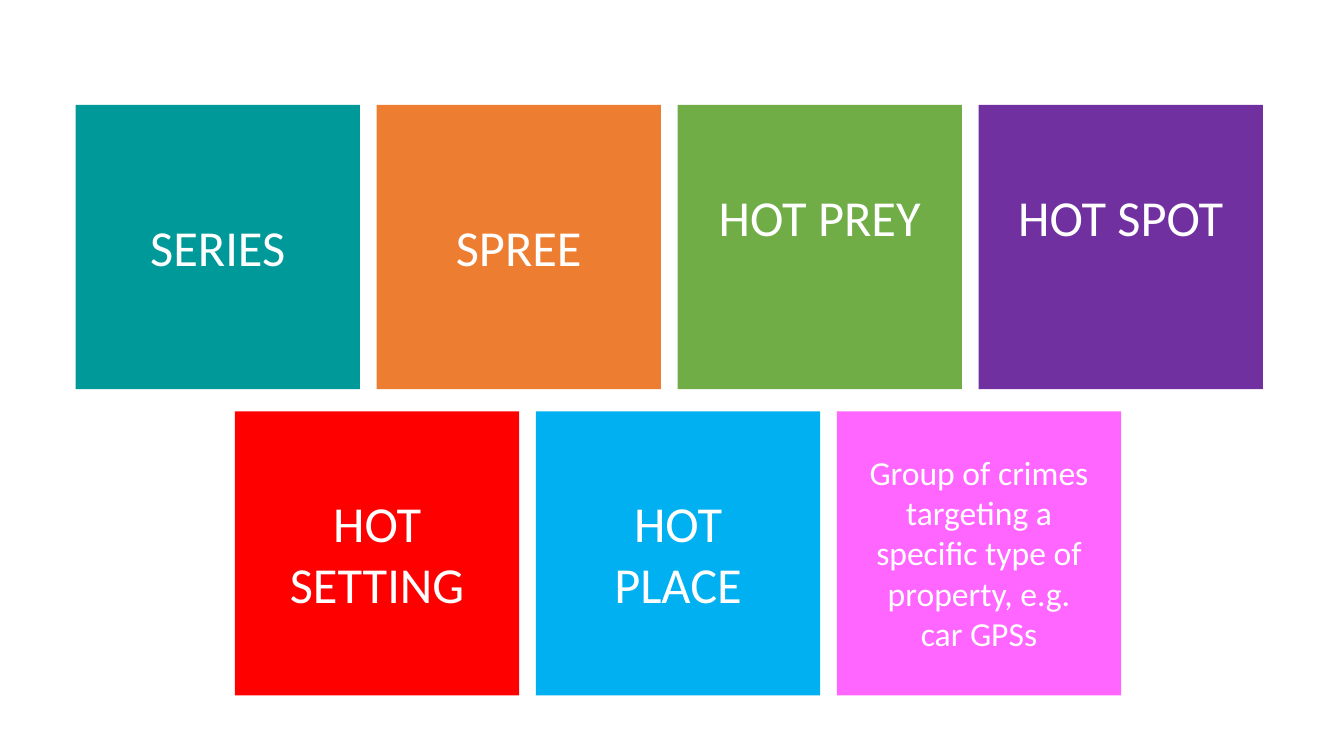
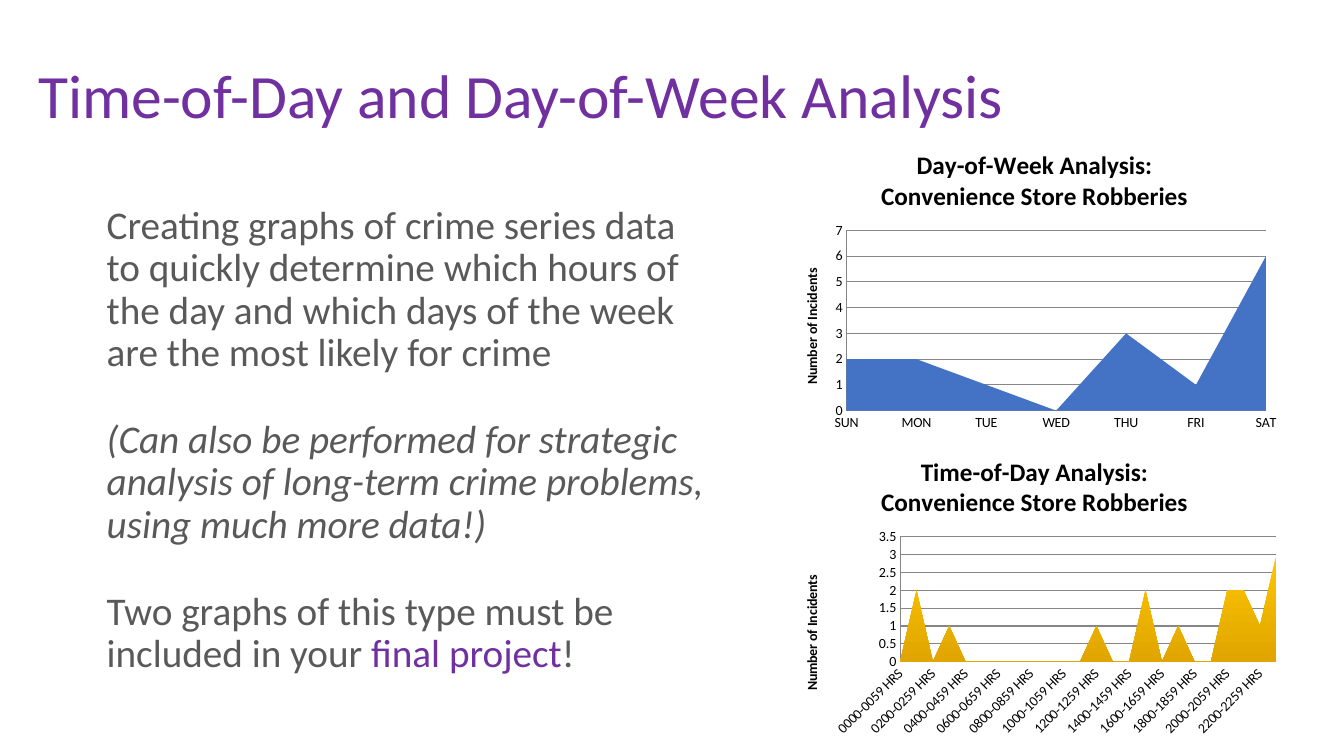
from dataclasses import dataclass
from typing import Optional

from pptx import Presentation
from pptx.chart.axis import ValueAxis
from pptx.chart.data import CategoryChartData
from pptx.dml.color import RGBColor
from pptx.enum.chart import XL_CHART_TYPE, XL_TICK_MARK
from pptx.enum.shapes import MSO_SHAPE
from pptx.enum.text import MSO_ANCHOR, PP_ALIGN
from pptx.oxml.ns import qn
from pptx.slide import Slide
from pptx.text.text import Font, TextFrame
from pptx.util import Inches, Pt

FONT = "Calibri"
WHITE = RGBColor(0xFF, 0xFF, 0xFF)
BLACK = RGBColor(0x00, 0x00, 0x00)
TEAL = RGBColor(0x00, 0x99, 0x99)
ORANGE = RGBColor(0xED, 0x7D, 0x31)
GREEN = RGBColor(0x70, 0xAD, 0x47)
PURPLE = RGBColor(0x70, 0x30, 0xA0)
RED = RGBColor(0xFF, 0x00, 0x00)
SKY = RGBColor(0x00, 0xB0, 0xF0)
PINK = RGBColor(0xFF, 0x66, 0xFF)
BODY_GRAY = RGBColor(0x59, 0x59, 0x59)
GRID_GRAY = RGBColor(0x86, 0x86, 0x86)
BLUE = RGBColor(0x44, 0x72, 0xC4)
GOLD = RGBColor(0xFF, 0xC6, 0x00)
DARK_GOLD = RGBColor(0xE0, 0xA5, 0x00)

TILE_SIZE = 2.82
TILE_PITCH = 2.985


@dataclass(frozen=True)
class Tile:
    text: str
    color: RGBColor
    label_height: float = 1.31
    label_width: float = 2.35
    size: float = 36


@dataclass(frozen=True)
class TileRow:
    left: float
    top: float
    tiles: tuple[Tile, ...]


@dataclass(frozen=True)
class Run:
    text: str
    color: RGBColor = BODY_GRAY
    italic: bool = False


@dataclass(frozen=True)
class IncidentChart:
    title: str
    top: float
    categories: list[str]
    values: list[Optional[int]]
    colors: tuple[RGBColor, ...]
    label_rotation: int = 0


TILE_ROWS = (
    TileRow(0.75, 1.04, (
        Tile("SERIES", TEAL, label_height=0.71),
        Tile("SPREE", ORANGE, label_height=0.71),
        Tile("HOT PREY", GREEN),
        Tile("HOT SPOT", PURPLE),
    )),
    TileRow(2.33, 4.08, (
        Tile("HOT SETTING", RED),
        Tile("HOT PLACE", SKY),
        Tile("Group of crimes targeting a specific type of property, e.g. car GPSs",
             PINK, label_height=2.12, label_width=2.47, size=24),
    )),
)

BODY = (
    (Run("Creating graphs of crime series data to quickly determine which hours "
         "of the day and which days of the week are the most likely for crime"),),
    (Run("(Can also be performed for strategic analysis of long-term crime "
         "problems, using much more data!)", italic=True),),
    (Run("Two graphs of this type must be included in your "),
     Run("final project", PURPLE), Run("!")),
)

# Incidents by starting hour; hours without incidents stay empty.
HOURLY_INCIDENTS = {1: 2, 3: 1, 12: 1, 15: 2, 17: 1, 20: 2, 21: 2, 22: 1, 23: 3}

CHARTS = (
    IncidentChart("Day-of-Week Analysis:\nConvenience Store Robberies", 1.33,
                  ["SUN", "MON", "TUE", "WED", "THU", "FRI", "SAT"],
                  [2, 2, 1, 0, 3, 1, 6], (BLUE,)),
    IncidentChart("Time-of-Day Analysis:\nConvenience Store Robberies", 4.37,
                  [f"{hour:02}00-{hour:02}59 HRS" for hour in range(24)],
                  [HOURLY_INCIDENTS.get(hour) for hour in range(24)],
                  (GOLD, DARK_GOLD), label_rotation=-45),
)


def style_font(font: Font, size: float, color: RGBColor,
               bold: bool = False, italic: bool = False) -> None:
    font.name = FONT
    font.size = Pt(size)
    font.bold = bold
    font.italic = italic
    font.color.rgb = color


def add_text(slide: Slide, paragraphs: tuple[tuple[Run, ...], ...],
             left: float, top: float, width: float, height: float, *,
             size: float, align: PP_ALIGN = PP_ALIGN.LEFT,
             anchor: MSO_ANCHOR = MSO_ANCHOR.TOP,
             line_spacing: float = 1.0, space_before: float = 0) -> None:
    box = slide.shapes.add_textbox(Inches(left), Inches(top), Inches(width), Inches(height))
    frame = box.text_frame
    frame.word_wrap = True
    frame.vertical_anchor = anchor
    for index, runs in enumerate(paragraphs):
        paragraph = frame.add_paragraph() if index else frame.paragraphs[0]
        paragraph.alignment = align
        paragraph.line_spacing = line_spacing
        if index:
            paragraph.space_before = Pt(space_before)
        for item in runs:
            run = paragraph.add_run()
            run.text = item.text
            style_font(run.font, size, item.color, italic=item.italic)


def add_tile(slide: Slide, tile: Tile, left: float, top: float) -> None:
    """Draw a square with its label box centred on it."""
    square = slide.shapes.add_shape(MSO_SHAPE.RECTANGLE, Inches(left), Inches(top),
                                    Inches(TILE_SIZE), Inches(TILE_SIZE))
    square.shadow.inherit = False
    square.fill.solid()
    square.fill.fore_color.rgb = tile.color
    square.line.fill.background()
    add_text(slide, ((Run(tile.text, WHITE),),),
             left + (TILE_SIZE - tile.label_width) / 2,
             top + (TILE_SIZE - tile.label_height) / 2,
             tile.label_width, tile.label_height,
             size=tile.size, align=PP_ALIGN.CENTER)


def set_chart_text(frame: TextFrame, text: str, size: float) -> None:
    frame.text = text
    for paragraph in frame.paragraphs:
        style_font(paragraph.font, size, BLACK, bold=True)
        for run in paragraph.runs:
            style_font(run.font, size, BLACK, bold=True)


def style_value_axis(axis: ValueAxis) -> None:
    axis.has_major_gridlines = True
    axis.major_gridlines.format.line.color.rgb = GRID_GRAY
    axis.major_gridlines.format.line.width = Pt(0.75)
    axis.has_title = True
    set_chart_text(axis.axis_title.text_frame, "Number of Incidents", 10)


def add_incident_chart(slide: Slide, incident_chart: IncidentChart) -> None:
    data = CategoryChartData()
    data.categories = incident_chart.categories
    data.add_series("Series 1", incident_chart.values)
    chart = slide.shapes.add_chart(XL_CHART_TYPE.AREA, Inches(7.76), Inches(incident_chart.top),
                                   Inches(5), Inches(3), data).chart
    style_font(chart.font, 10, BLACK)
    chart.has_legend = False
    chart.has_title = True
    set_chart_text(chart.chart_title.text_frame, incident_chart.title, 18)
    chart.chart_title.include_in_layout = False
    chart.plots[0].vary_by_categories = False

    for axis in (chart.category_axis, chart.value_axis):
        axis.major_tick_mark = XL_TICK_MARK.NONE
        axis.minor_tick_mark = XL_TICK_MARK.NONE
        axis.format.line.color.rgb = GRID_GRAY
        style_font(axis.tick_labels.font, 10, BLACK)
    style_value_axis(chart.value_axis)
    if incident_chart.label_rotation:
        body = chart.category_axis.tick_labels.font._element.getparent().getparent().getparent()
        body.find(qn("a:bodyPr")).set("rot", str(incident_chart.label_rotation * 60000))

    fill = chart.plots[0].series[0].format.fill
    if len(incident_chart.colors) == 1:
        fill.solid()
        fill.fore_color.rgb = incident_chart.colors[0]
    else:
        fill.gradient()
        fill.gradient_angle = 270
        for stop, color in zip(fill.gradient_stops, incident_chart.colors):
            stop.color.rgb = color


def build_pattern_slide(slide: Slide) -> None:
    for row in TILE_ROWS:
        for column, tile in enumerate(row.tiles):
            add_tile(slide, tile, row.left + column * TILE_PITCH, row.top)


def build_analysis_slide(slide: Slide) -> None:
    add_text(slide, ((Run("Time-of-Day and Day-of-Week Analysis", PURPLE),),),
             0.28, 0.25, 11.5, 1.45, size=44, anchor=MSO_ANCHOR.MIDDLE, line_spacing=0.9)
    add_text(slide, BODY, 0.96, 1.99, 6.12, 4.76,
             size=28, line_spacing=0.9, space_before=32)
    for incident_chart in CHARTS:
        add_incident_chart(slide, incident_chart)


def main() -> None:
    presentation = Presentation()
    presentation.slide_width = Inches(13.33)
    presentation.slide_height = Inches(7.5)
    blank = presentation.slide_layouts[6]
    for build in (build_pattern_slide, build_analysis_slide):
        build(presentation.slides.add_slide(blank))
    presentation.save("out.pptx")


if __name__ == "__main__":
    main()
